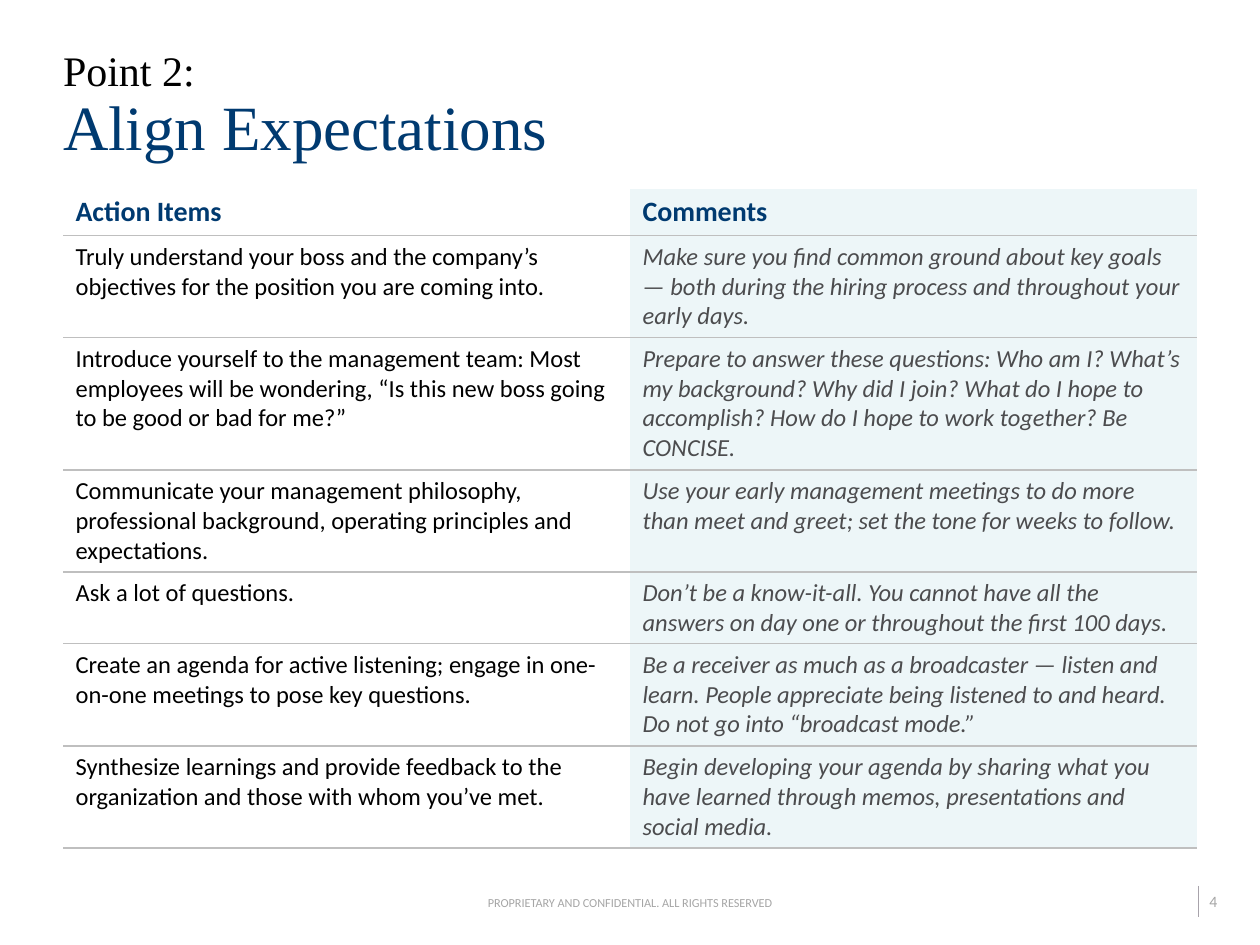
import pptx
import pptx.dml.color
import pptx.enum.text
import pptx.oxml
import pptx.oxml.ns
import pptx.util
from pptx.util import Inches, Pt

ANCHOR = pptx.enum.text.MSO_ANCHOR
ALIGN = pptx.enum.text.PP_ALIGN

THEME = {
    "kicker": {"name": "Times New Roman", "size": 24, "color": "000000", "bold": False},
    "heading": {"name": "Times New Roman", "size": 36, "color": "003A70", "bold": False},
    "header": {"name": "Calibri", "size": 16, "color": "003A70", "bold": True},
    "action": {"name": "Calibri", "size": 14, "color": "000000"},
    "comment": {"name": "Calibri", "size": 14, "color": "4C4C4E", "italic": True},
    "number": {"name": "Calibri", "size": 9, "color": "A6A6A6"},
    "notice": {"name": "Calibri", "size": 7, "color": "A6A6A6"},
    "comment_fill": "EDF6F8",
    "rule": "BFBFBF",
    "divider": "A8A3AB",
}

TITLE = [("Point 2:", "kicker"), ("Align Expectations", "heading")]
HEADERS = ("Action Items", "Comments")
ITEMS = [
    ("Truly understand your boss and the company’s objectives for the position you are coming into.",
     "Make sure you find common ground about key goals — both during the hiring process "
     "and throughout your early days."),
    ("Introduce yourself to the management team: Most employees will be wondering, "
     "“Is this new boss going to be good or bad for me?”",
     "Prepare to answer these questions: Who am I? What’s my background? Why did I join? "
     "What do I hope to accomplish? How do I hope to work together? Be CONCISE."),
    ("Communicate your management philosophy, professional background, operating principles "
     "and expectations.",
     "Use your early management meetings to do more than meet and greet; "
     "set the tone for weeks to follow."),
    ("Ask a lot of questions.",
     "Don’t be a know-it-all. You cannot have all the answers on day one or throughout "
     "the first 100 days."),
    ("Create an agenda for active listening; engage in one-on-one meetings to pose key questions.",
     "Be a receiver as much as a broadcaster — listen and learn. People appreciate being "
     "listened to and heard. Do not go into “broadcast mode.”"),
    ("Synthesize learnings and provide feedback to the organization and those with whom you’ve met.",
     "Begin developing your agenda by sharing what you have learned through memos, "
     "presentations and social media."),
]
ROW_HEIGHTS = (0.37, 0.81, 1.05, 0.81, 0.57, 0.81, 0.81)
NOTICE = "PROPRIETARY AND CONFIDENTIAL. ALL RIGHTS RESERVED"
PAGE = "4"

NO_STYLE = "{2D5ABB26-0587-4C30-8999-92F81FD0307C}"
MARGIN, WIDTH = 0.5, 9


def rgb(code):
    return pptx.dml.color.RGBColor.from_string(code)


def apply_format(font, role):
    for key, value in THEME[role].items():
        if key == "color":
            font.color.rgb = rgb(value)
        else:
            setattr(font, key, Pt(value) if key == "size" else value)


def set_frame(frame, insets, **options):
    """Set left, top, right and bottom insets in inches, and other frame options."""
    for side, inset in zip(("left", "top", "right", "bottom"), insets):
        setattr(frame, f"margin_{side}", Inches(inset))
    for key, value in options.items():
        setattr(frame, key, value)


def add_run(paragraph, text, role):
    run = paragraph.add_run()
    run.text = text
    apply_format(run.font, role)


def add_title(slide):
    title = slide.shapes.title
    title.left, title.top, title.width, title.height = map(Inches, (MARGIN, 0.25, WIDTH, 1.1))
    set_frame(title.text_frame, (0, 0.05, 0, 0.05), word_wrap=True,
              vertical_anchor=ANCHOR.BOTTOM, auto_size=pptx.enum.text.MSO_AUTO_SIZE.NONE)
    paragraph = title.text_frame.paragraphs[0]
    paragraph.alignment, paragraph.line_spacing = ALIGN.LEFT, 0.9
    for index, (text, role) in enumerate(TITLE):
        if index:
            paragraph.add_line_break()
        add_run(paragraph, text, role)


def add_rules(cell, sides):
    """Draw cell borders on the given sides, which must be in the order T, B."""
    properties = cell._tc.get_or_add_tcPr()
    for index, side in enumerate(sides):
        properties.insert(index, pptx.oxml.parse_xml(
            f'<a:ln{side} {pptx.oxml.ns.nsdecls("a")} w="{Pt(1)}"><a:solidFill>'
            f'<a:srgbClr val="{THEME["rule"]}"/></a:solidFill></a:ln{side}>'))


def add_action_table(slide):
    rows = [HEADERS] + ITEMS
    frame = slide.shapes.add_table(len(rows), len(HEADERS), Inches(MARGIN), Inches(1.5),
                                   Inches(WIDTH), Inches(sum(ROW_HEIGHTS)))
    table = frame.table
    table.first_row = table.horz_banding = False
    table._tbl.tblPr.find(pptx.oxml.ns.qn("a:tableStyleId")).text = NO_STYLE
    for r, texts in enumerate(rows):
        table.rows[r].height = Inches(ROW_HEIGHTS[r])
        for c, text in enumerate(texts):
            cell = table.cell(r, c)
            cell.vertical_anchor = ANCHOR.TOP if r else ANCHOR.MIDDLE
            if c:
                cell.fill.solid()
                cell.fill.fore_color.rgb = rgb(THEME["comment_fill"])
            else:
                cell.fill.background()
            add_rules(cell, "TB" if r else "B")
            role = ("action", "comment")[c] if r else "header"
            add_run(cell.text_frame.paragraphs[0], text, role)


def add_label(slide, text, role, place, insets, alignment, anchor):
    label = slide.shapes.add_textbox(*map(Inches, place))
    set_frame(label.text_frame, insets, word_wrap=False, vertical_anchor=anchor)
    paragraph = label.text_frame.paragraphs[0]
    paragraph.alignment = alignment
    add_run(paragraph, text, role)


def add_footer(slide):
    add_label(slide, PAGE, "number", (9.5, 7.03, 0.4, 0.25), (0.1, 0.05, 0, 0.05),
              ALIGN.LEFT, ANCHOR.TOP)
    divider = slide.shapes.add_connector(pptx.enum.shapes.MSO_CONNECTOR.STRAIGHT,
                                         *map(Inches, (9.51, 7.03, 9.51, 7.28)))
    divider.line.color.rgb = rgb(THEME["divider"])
    divider.line.width = Pt(0.5)
    divider._element.spPr.append(pptx.oxml.parse_xml(
        f'<a:effectLst {pptx.oxml.ns.nsdecls("a")}/>'))
    add_label(slide, NOTICE, "notice", (3.86, 7.1, 2.28, 0.12), (0, 0, 0, 0),
              ALIGN.CENTER, ANCHOR.MIDDLE)


def main():
    deck = pptx.Presentation()
    deck.slide_width, deck.slide_height = Inches(10), Inches(7.5)
    slide = deck.slides.add_slide(deck.slide_layouts[5])
    add_footer(slide)
    add_title(slide)
    add_action_table(slide)
    deck.save("out.pptx")


if __name__ == "__main__":
    main()
